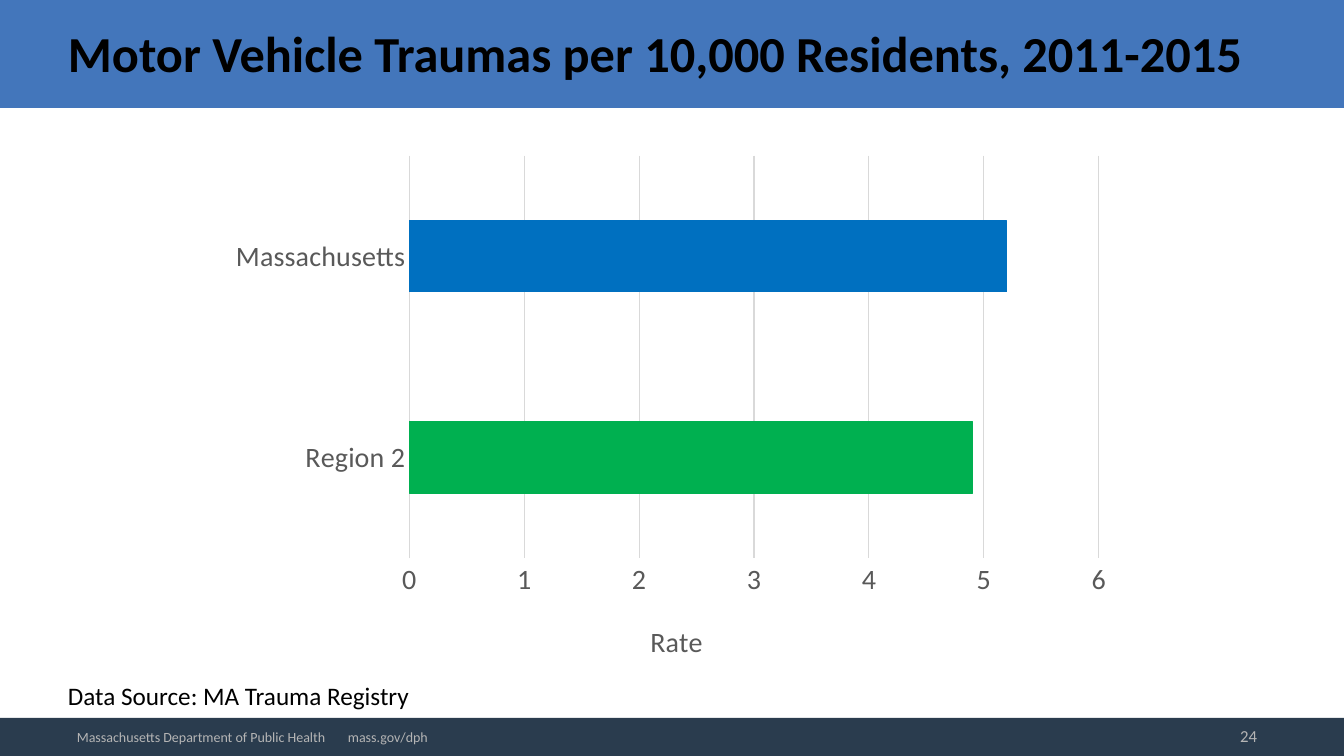
from lxml.etree import SubElement
from pptx import Presentation
from pptx.chart.data import CategoryChartData
from pptx.dml.color import RGBColor
from pptx.enum.chart import XL_CHART_TYPE, XL_TICK_MARK
from pptx.enum.shapes import MSO_SHAPE
from pptx.enum.text import MSO_ANCHOR, PP_ALIGN
from pptx.oxml import parse_xml
from pptx.oxml.ns import nsdecls, qn
from pptx.util import Emu, Pt

FONT = "Calibri"
HEADER_BLUE = RGBColor(0x43, 0x76, 0xBB)
FOOTER_NAVY = RGBColor(0x2A, 0x3C, 0x4E)
FOOTER_GRAY = RGBColor(0xB5, 0xB5, 0xB5)
BLACK = RGBColor(0, 0, 0)
LABEL_GRAY = RGBColor(0x59, 0x59, 0x59)
GRID_GRAY = RGBColor(0xD9, 0xD9, 0xD9)
REGION_GREEN = RGBColor(0, 0xB0, 0x50)
STATE_BLUE = RGBColor(0, 0x70, 0xC0)


def px(length):
    return Emu(round(length * 914400 / 100.8))


def set_font(font, size, color, bold=False):
    font.name = FONT
    font.size = Pt(size)
    font.bold = bold
    font.color.rgb = color


def add_band(page, top, height, color):
    band = page.shapes.add_shape(
        MSO_SHAPE.RECTANGLE, 0, px(top), px(1344), px(height))
    band.shadow.inherit = False
    band.fill.solid()
    band.fill.fore_color.rgb = color
    band.line.fill.background()


def add_text(page, text, left, top, width, height, size, color,
             bold=False, align=PP_ALIGN.LEFT, anchor=MSO_ANCHOR.MIDDLE):
    box = page.shapes.add_textbox(px(left), px(top), px(width), px(height))
    frame = box.text_frame
    frame.word_wrap = True
    frame.vertical_anchor = anchor
    para = frame.paragraphs[0]
    para.text = text
    para.alignment = align
    set_font(para.font, size, color, bold)
    return para


def add_tab_stop(para, position):
    properties = para._p.get_or_add_pPr()
    stops = parse_xml(f"<a:tabLst {nsdecls('a')}/>")
    SubElement(stops, qn("a:tab"), pos=str(px(position)), algn="l")
    properties.insert_element_before(stops, "a:defRPr", "a:extLst")


def set_layout(parent, index, **settings):
    for layout in parent.findall(qn("c:layout")):
        parent.remove(layout)
    layout = parse_xml(f"<c:layout {nsdecls('c')}/>")
    parent.insert(index, layout)
    manual = SubElement(layout, qn("c:manualLayout"))
    for name, value in settings.items():
        SubElement(manual, qn(f"c:{name}"), val=str(value))


def style_axis(axis):
    axis.major_tick_mark = XL_TICK_MARK.NONE
    axis.minor_tick_mark = XL_TICK_MARK.NONE
    set_font(axis.tick_labels.font, 20, LABEL_GRAY)


def style_line(line, color):
    line.color.rgb = color
    line.width = Pt(0.75)


def add_rate_chart(page):
    rates = CategoryChartData()
    rates.categories = ["Region 2", "Massachusetts"]
    rates.add_series("Series 1", [4.9, 5.2])
    chart = page.shapes.add_chart(
        XL_CHART_TYPE.BAR_CLUSTERED,
        px(219), px(145), px(907), px(530), rates).chart
    set_font(chart.font, 10, BLACK)
    chart.has_legend = False
    chart.has_title = False

    style_axis(chart.category_axis)
    style_line(chart.category_axis.format.line, GRID_GRAY)

    rate_axis = chart.value_axis
    style_axis(rate_axis)
    rate_axis.minimum_scale = 0
    rate_axis.maximum_scale = 6
    rate_axis.major_unit = 1
    rate_axis.tick_labels.number_format = "General"
    rate_axis.tick_labels.number_format_is_linked = False
    rate_axis.format.line.fill.background()
    style_line(rate_axis.major_gridlines.format.line, GRID_GRAY)
    title = rate_axis.axis_title
    para = title.text_frame.paragraphs[0]
    para.text = "Rate"
    set_font(para.font, 20, LABEL_GRAY)
    set_layout(title._element, 1, xMode="edge", yMode="edge", x=0.47, y=0.89)

    plot = chart.plots[0]
    plot.gap_width = 182
    plot.vary_by_categories = False
    series = plot.series[0]
    state_bar = series.points[1]
    for bar, color in ((series, REGION_GREEN), (state_bar, STATE_BLUE)):
        bar.format.fill.solid()
        bar.format.fill.fore_color.rgb = color
        style_line(bar.format.line, color)

    set_layout(chart._chartSpace.chart.plotArea, 0, layoutTarget="inner",
               xMode="edge", yMode="edge", x=0.21, y=0.02, w=0.76, h=0.76)


def main():
    deck = Presentation()
    deck.slide_width = px(1344)
    deck.slide_height = px(756)
    page = deck.slides.add_slide(deck.slide_layouts[6])

    add_band(page, 0, 108, HEADER_BLUE)
    add_band(page, 718, 38, FOOTER_NAVY)
    add_text(page, "Motor Vehicle Traumas per 10,000 Residents, 2011-2015",
             58, 13, 1208, 78, 36, BLACK, bold=True)
    add_rate_chart(page)
    add_text(page, "Data Source: MA Trauma Registry",
             58, 675, 396, 40, 18, BLACK, anchor=MSO_ANCHOR.TOP)
    add_text(page, "24", 966, 716, 301, 40, 12, FOOTER_GRAY,
             align=PP_ALIGN.RIGHT)
    footer = add_text(page, "Massachusetts Department of Public Health\tmass.gov/dph",
                      67, 718, 420, 38, 10, FOOTER_GRAY)
    add_tab_stop(footer, 271)
    deck.save("out.pptx")


if __name__ == "__main__":
    main()
